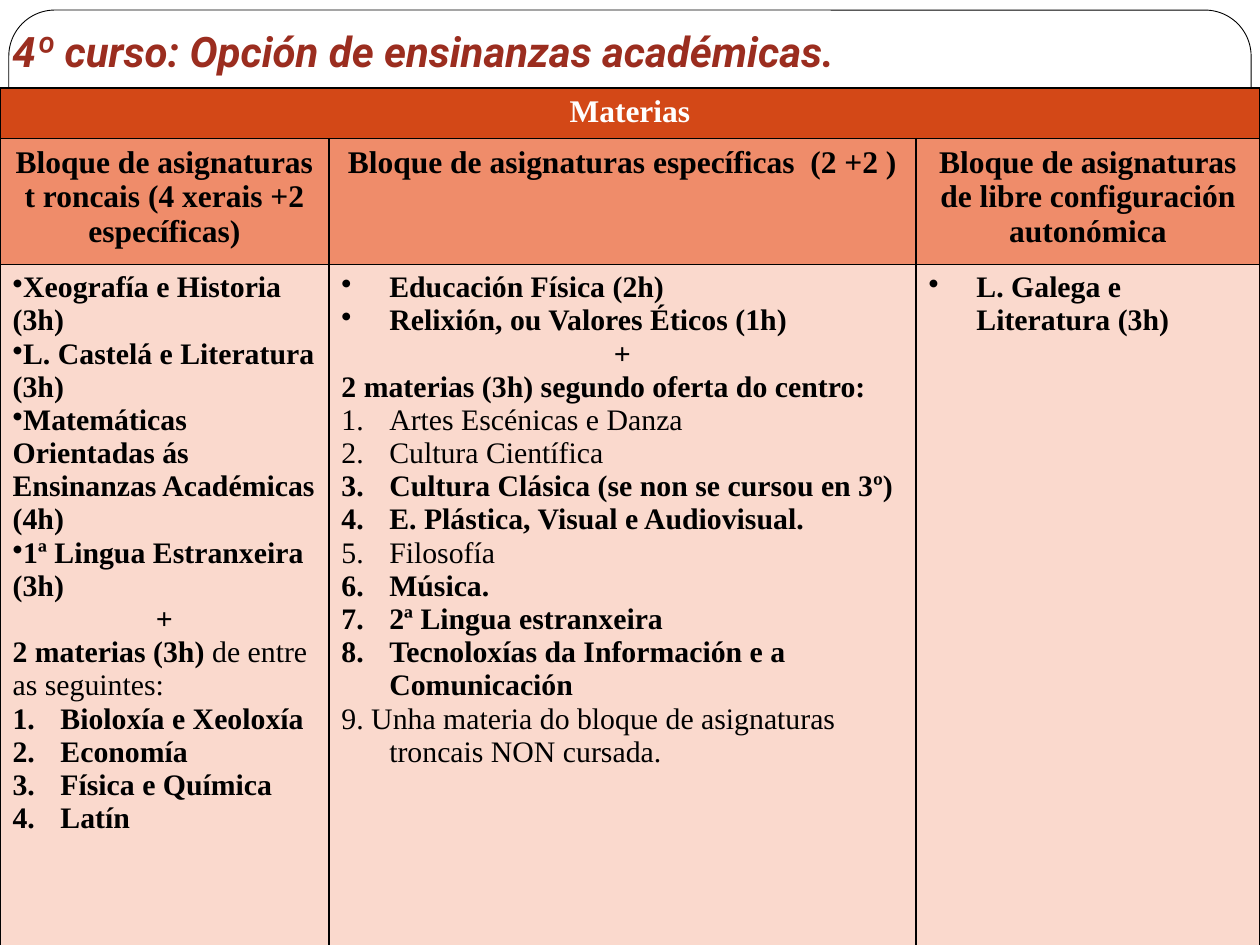
from dataclasses import dataclass

from pptx import Presentation
from pptx import util as u
from pptx.dml.color import RGBColor
from pptx.enum import shapes, text
from pptx.oxml import parse_xml
from pptx.oxml.ns import nsdecls

BLACK = RGBColor(0x00, 0x00, 0x00)
WHITE = RGBColor(0xFF, 0xFF, 0xFF)
TITLE_RED = RGBColor(0x9B, 0x2D, 0x1F)
BANNER = RGBColor(0xD3, 0x48, 0x17)
HEADING = RGBColor(0xEF, 0x8C, 0x6A)
BODY = RGBColor(0xFA, 0xD9, 0xCD)
SERIF = "Times New Roman"
HANG = 0.38
COLUMN_WIDTHS = (2.61, 4.66, 2.73)
ROW_HEIGHTS = (0.38, 0.94, 5.48)
MARKERS = {
    "bullet": '<a:buChar {} char="•"/>',
    "number": '<a:buAutoNum {} type="arabicPeriod"/>',
}


@dataclass(frozen=True)
class Line:
    """One paragraph of a table cell."""

    words: str
    bold: bool = True
    marker: str = ""
    hang: float = 0
    centred: bool = False
    plain_tail: str = ""


def bullet(words: str, hang: float = HANG) -> Line:
    """Describe a bulleted subject."""
    return Line(words, marker="bullet", hang=hang)


def number(words: str, bold: bool = True) -> Line:
    """Describe a numbered subject."""
    return Line(words, bold, "number", HANG)


HEADINGS = (
    "Bloque de asignaturas t roncais (4 xerais +2 específicas)",
    "Bloque de asignaturas específicas  (2 +2 )",
    "Bloque de asignaturas de libre configuración autonómica",
)
SUBJECTS = (
    (
        bullet("Xeografía e Historia (3h)", 0),
        bullet("L. Castelá e Literatura (3h)", 0),
        bullet("Matemáticas Orientadas ás Ensinanzas Académicas (4h)", 0),
        bullet("1ª Lingua Estranxeira (3h)", 0),
        Line("+", centred=True),
        Line("2 materias (3h) ", plain_tail="de entre as seguintes:"),
        number("Bioloxía e Xeoloxía"),
        number("Economía"),
        number("Física e Química"),
        number("Latín"),
    ),
    (
        bullet("Educación Física (2h)"),
        bullet("Relixión, ou Valores Éticos (1h)"),
        Line("+", hang=HANG, centred=True),
        Line("2 materias (3h) segundo oferta do centro:", hang=HANG),
        number("Artes Escénicas e Danza", bold=False),
        number("Cultura Científica", bold=False),
        number("Cultura Clásica (se non se cursou en 3º)"),
        number("E. Plástica, Visual e Audiovisual."),
        number("Filosofía", bold=False),
        number("Música."),
        number("2ª Lingua estranxeira"),
        number("Tecnoloxías da Información e a Comunicación"),
        Line("9. Unha materia do bloque de asignaturas troncais NON cursada.",
             bold=False, hang=HANG),
    ),
    (bullet("L. Galega e Literatura (3h)"),),
)


def add_span(para, words: str, *, size: float, color: RGBColor = BLACK,
             font: str = SERIF, bold: bool = True, italic: bool = False) -> None:
    """Append formatted text to a paragraph."""
    span = para.add_run()
    span.text = words
    span.font.size = u.Pt(size)
    span.font.name = font
    span.font.bold = bold
    span.font.italic = italic
    span.font.color.rgb = color


def style_cell(cell, fill: RGBColor) -> None:
    """Give a cell black borders and a solid fill."""
    properties = cell._tc.get_or_add_tcPr()
    for side in "LRTB":
        properties.append(parse_xml(
            f'<a:ln{side} {nsdecls("a")} w="12700"><a:solidFill>'
            f'<a:srgbClr val="{BLACK}"/></a:solidFill></a:ln{side}>'))
    cell.fill.solid()
    cell.fill.fore_color.rgb = fill


def write_cell(cell, lines: tuple[Line, ...], size: float, color: RGBColor = BLACK) -> None:
    """Write the lines of a cell, one paragraph each."""
    frame = cell.text_frame
    for index, line in enumerate(lines):
        para = frame.add_paragraph() if index else frame.paragraphs[0]
        para.alignment = text.PP_ALIGN.CENTER if line.centred else text.PP_ALIGN.LEFT
        properties = para._p.get_or_add_pPr()
        properties.set("marL", str(u.Inches(line.hang)))
        properties.set("indent", str(u.Inches(-line.hang)))
        if line.marker:
            properties.append(parse_xml(MARKERS[line.marker].format(nsdecls("a"))))
        add_span(para, line.words, size=size, color=color, bold=line.bold)
        if line.plain_tail:
            add_span(para, line.plain_tail, size=size, color=color, bold=False)


def add_frame(page) -> None:
    """Draw the rounded frame of the page."""
    box = page.shapes.add_shape(shapes.MSO_SHAPE.ROUNDED_RECTANGLE, u.Inches(0.07),
                                u.Inches(0.08), u.Inches(9.86), u.Inches(7.32))
    box.adjustments[0] = 0.05
    box.shadow.inherit = False
    box.fill.solid()
    box.fill.fore_color.rgb = WHITE
    box.line.color.rgb = BLACK
    box.line.width = u.Pt(0.5)


def add_title(page) -> None:
    """Write the title above the table."""
    box = page.shapes.add_textbox(0, 0, u.Inches(10), u.Inches(0.7))
    frame = box.text_frame
    frame.word_wrap = True
    frame.vertical_anchor = text.MSO_ANCHOR.BOTTOM
    frame.margin_bottom = u.Inches(0.1)
    add_span(frame.paragraphs[0], "4º curso: Opción de ensinanzas académicas.",
             size=24, color=TITLE_RED, font="Roboto", italic=True)


def add_subject_table(page) -> None:
    """Build the table of subject blocks."""
    table = page.shapes.add_table(len(ROW_HEIGHTS), len(COLUMN_WIDTHS), 0, u.Inches(0.7),
                                  u.Inches(sum(COLUMN_WIDTHS)),
                                  u.Inches(sum(ROW_HEIGHTS))).table
    table.first_row = False
    table.horz_banding = False
    for column, width in zip(table.columns, COLUMN_WIDTHS):
        column.width = u.Inches(width)
    for row, height, fill in zip(table.rows, ROW_HEIGHTS, (BANNER, HEADING, BODY)):
        row.height = u.Inches(height)
        for cell in row.cells:
            style_cell(cell, fill)
    table.cell(0, 0).merge(table.cell(0, len(COLUMN_WIDTHS) - 1))
    write_cell(table.cell(0, 0), (Line("Materias", centred=True),), 18, WHITE)
    for index, (heading, subjects) in enumerate(zip(HEADINGS, SUBJECTS)):
        write_cell(table.cell(1, index), (Line(heading, centred=True),), 18)
        write_cell(table.cell(2, index), subjects, 17)


def main() -> None:
    """Build and save the deck."""
    deck = Presentation()
    deck.slide_width = u.Inches(10)
    deck.slide_height = u.Inches(7.5)
    page = deck.slides.add_slide(deck.slide_layouts[6])
    add_frame(page)
    add_title(page)
    add_subject_table(page)
    deck.save("out.pptx")


if __name__ == "__main__":
    main()
